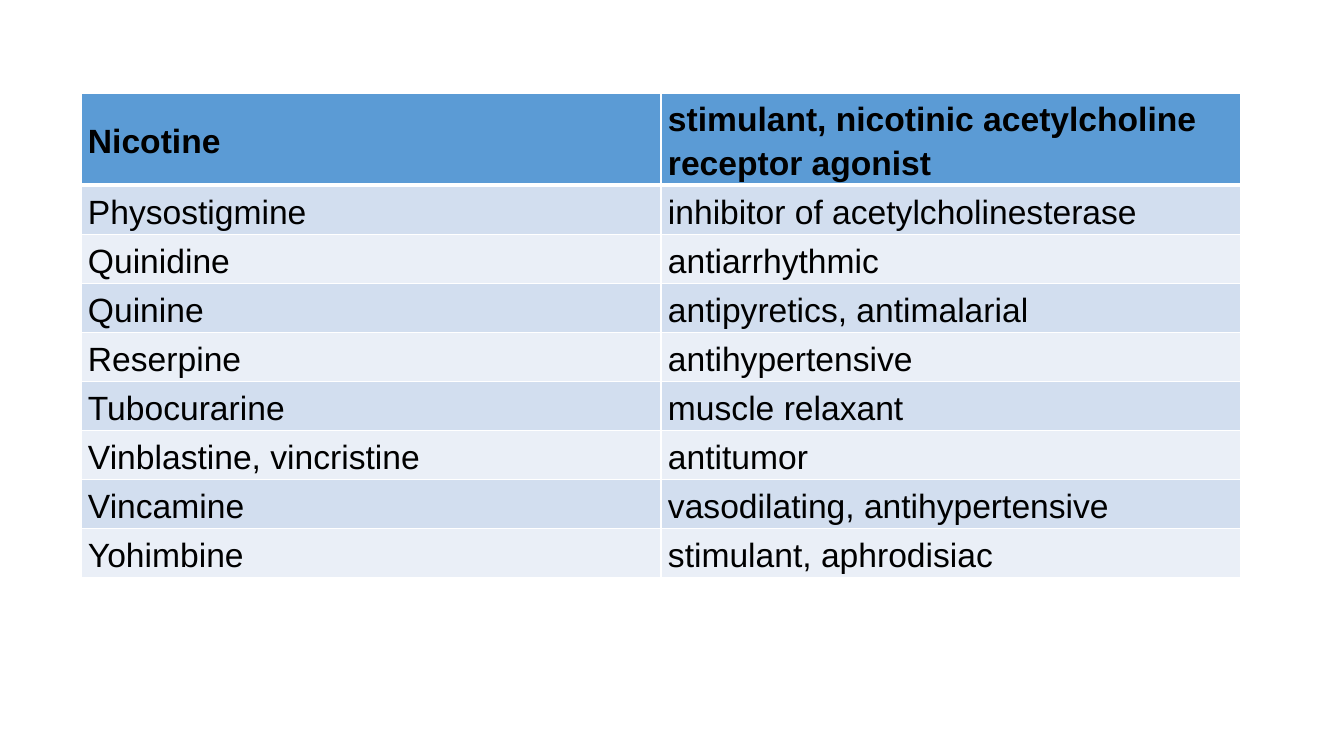
from lxml.etree import SubElement
from pptx import Presentation
from pptx.dml.color import RGBColor
from pptx.enum.text import MSO_ANCHOR
from pptx.oxml.ns import qn
from pptx.util import Emu, Pt

BLACK = RGBColor(0x00, 0x00, 0x00)
WHITE = RGBColor(0xFF, 0xFF, 0xFF)
HEADER_BLUE = RGBColor(0x5B, 0x9B, 0xD5)
BAND_DARK = RGBColor(0xD2, 0xDE, 0xEF)
BAND_LIGHT = RGBColor(0xEA, 0xEF, 0xF7)

ALKALOIDS = [
    ("Nicotine", "stimulant, nicotinic acetylcholine receptor agonist"),
    ("Physostigmine", "inhibitor of acetylcholinesterase"),
    ("Quinidine", "antiarrhythmic"),
    ("Quinine", "antipyretics, antimalarial"),
    ("Reserpine", "antihypertensive"),
    ("Tubocurarine", "muscle relaxant"),
    ("Vinblastine, vincristine", "antitumor"),
    ("Vincamine", "vasodilating, antihypertensive"),
    ("Yohimbine", "stimulant, aphrodisiac"),
]


def px(length):
    return Emu(round(length * 914400 / 100.8))


class SlideBuilder:
    font_name = "Arial"
    font_size = Pt(24)

    def __init__(self, slide):
        self.slide = slide

    def table(self, left, top, column_width, row_height, entries):
        columns = len(entries[0])
        table = self.slide.shapes.add_table(
            len(entries), columns, px(left), px(top),
            px(column_width * columns), px(row_height * len(entries))).table
        for row, entry in enumerate(entries):
            for column, text in enumerate(entry):
                self.cell(table.cell(row, column), text, row)

    def cell(self, cell, text, row):
        header = row == 0
        header_rule = 3
        self.border(cell, "lnL", 1)
        self.border(cell, "lnR", 1)
        self.border(cell, "lnT", header_rule if row == 1 else 1)
        self.border(cell, "lnB", header_rule if header else 1)
        cell.fill.solid()
        band = BAND_DARK if row % 2 else BAND_LIGHT
        cell.fill.fore_color.rgb = HEADER_BLUE if header else band
        cell.vertical_anchor = MSO_ANCHOR.MIDDLE
        cell.margin_left = cell.margin_right = px(7)
        cell.margin_top = cell.margin_bottom = px(3)

        paragraph = cell.text_frame.paragraphs[0]
        paragraph.text = text
        paragraph.line_spacing = 1.15
        paragraph.space_before = paragraph.space_after = Pt(12)
        font = paragraph.runs[0].font
        font.name = self.font_name
        font.size = self.font_size
        font.bold = header
        font.color.rgb = BLACK

    def border(self, cell, side, points):
        properties = cell._tc.get_or_add_tcPr()
        line = SubElement(properties, qn(f"a:{side}"), w=str(Pt(points)))
        fill = SubElement(line, qn("a:solidFill"))
        SubElement(fill, qn("a:srgbClr"), val=str(WHITE))


def main():
    presentation = Presentation()
    presentation.slide_width = px(1344)
    presentation.slide_height = px(756)
    blank_layout = presentation.slide_layouts[6]
    builder = SlideBuilder(presentation.slides.add_slide(blank_layout))
    builder.table(81, 93, 580, 41, ALKALOIDS)
    presentation.save("out.pptx")


if __name__ == "__main__":
    main()
